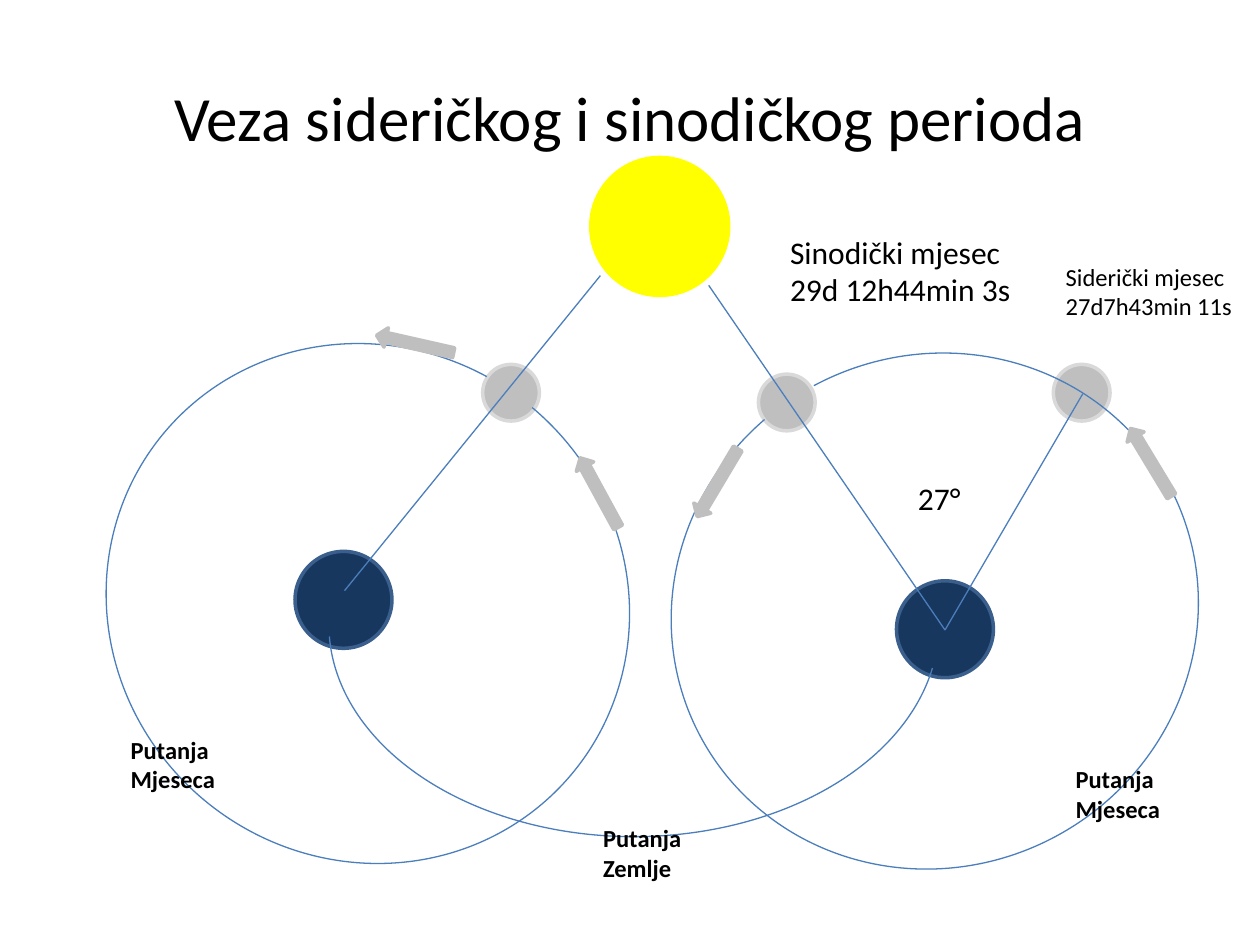
from lxml.etree import SubElement
from pptx import Presentation
from pptx.dml.color import RGBColor
from pptx.enum.shapes import MSO_CONNECTOR, MSO_SHAPE
from pptx.enum.text import MSO_ANCHOR, MSO_AUTO_SIZE, PP_ALIGN
from pptx.oxml.ns import qn
from pptx.util import Pt

COLORS = {
    "text": "000000",
    "earth": "17375E",
    "earth_edge": "3A5F8C",
    "sun": "FFFF00",
    "moon": "BFBFBF",
    "moon_edge": "D9D9D9",
    "orbit": "4B7EBC",
}


class Diagram:
    font_name = "Calibri"
    thin = 0.75
    thick = 2

    def __init__(self, slide):
        self.slide = slide

    def color(self, name):
        return RGBColor.from_string(COLORS[name])

    def format_paragraph(self, paragraph, size, bold=False):
        font = paragraph.font
        font.name = self.font_name
        font.size = Pt(size)
        font.bold = bold
        font.color.rgb = self.color("text")

    def title(self, text, left, top, width, height):
        title = self.slide.shapes.title
        title.left, title.top = Pt(left), Pt(top)
        title.width, title.height = Pt(width), Pt(height)
        title.text_frame.text = text
        title.text_frame.vertical_anchor = MSO_ANCHOR.MIDDLE
        paragraph = title.text_frame.paragraphs[0]
        paragraph.alignment = PP_ALIGN.CENTER
        self.format_paragraph(paragraph, 36)

    def shape(self, kind, center_x, center_y, width, height, fill, edge, weight):
        shape = self.slide.shapes.add_shape(
            kind, Pt(center_x - width / 2), Pt(center_y - height / 2), Pt(width), Pt(height))
        shape.shadow.inherit = False
        if fill:
            shape.fill.solid()
            shape.fill.fore_color.rgb = self.color(fill)
        else:
            shape.fill.background()
        shape.line.color.rgb = self.color(edge)
        shape.line.width = Pt(weight)
        return shape

    def disc(self, center_x, center_y, diameter, fill, edge):
        self.shape(MSO_SHAPE.OVAL, center_x, center_y, diameter, diameter,
                   fill, edge, self.thick)

    def orbit(self, center_x, center_y, width, height, rotation, start, end):
        arc = self.shape(MSO_SHAPE.ARC, center_x, center_y, width, height,
                         None, "orbit", self.thin)
        arc.rotation = rotation
        arc.adjustments[0] = start
        arc.adjustments[1] = end

    def arrow(self, center_x, center_y, rotation):
        arrow = self.shape(MSO_SHAPE.RIGHT_ARROW, center_x, center_y, 45.2, 11.3,
                           "moon", "moon", self.thick)
        arrow.rotation = rotation

    def line(self, start, end):
        points = [Pt(value) for value in (*start, *end)]
        connector = self.slide.shapes.add_connector(MSO_CONNECTOR.STRAIGHT, *points)
        connector.line.color.rgb = self.color("orbit")
        connector.line.width = Pt(self.thin)
        SubElement(connector._element.spPr, qn("a:effectLst"))

    def label(self, text, left, top, width, height, size, bold=False):
        box = self.slide.shapes.add_textbox(Pt(left), Pt(top), Pt(width), Pt(height))
        frame = box.text_frame
        frame.word_wrap = True
        frame.auto_size = MSO_AUTO_SIZE.SHAPE_TO_FIT_TEXT
        frame.text = text
        for paragraph in frame.paragraphs:
            self.format_paragraph(paragraph, size, bold)


def main():
    presentation = Presentation()
    presentation.slide_width, presentation.slide_height = Pt(720), Pt(540)
    slide = presentation.slides.add_slide(presentation.slide_layouts[5])
    diagram = Diagram(slide)
    diagram.title("Veza sideričkog i sinodičkog perioda", 36, 21.6, 648, 90)

    for center in ((196.3, 342.8), (540, 359.6)):
        diagram.disc(*center, 55.4, "earth", "earth_edge")
    diagram.disc(377, 129.4, 78.8, "sun", "sun")
    for center in ((292, 224.4), (618.1, 224.4), (449.6, 230)):
        diagram.disc(*center, 32.4, "moon", "moon_edge")

    diagram.orbit(210.2, 344.9, 303.8, 292.3, 40, 162, 154.6)
    diagram.orbit(534.2, 349.2, 303.8, 292.3, 331.8, 162, 153.94)
    diagram.orbit(362.2, 357.1, 348.5, 241.9, 180, 112.92, 214.7)

    earth_center = (540, 360)
    diagram.line((196.9, 337.5), (343.1, 157.5))
    diagram.line(earth_center, (405, 163.1))
    diagram.line(earth_center, (618.75, 225))

    diagram.label("Putanja Zemlje", 337.5, 466.9, 95.6, 41.2, 14, True)
    diagram.label("Putanja Mjeseca", 67.5, 416.2, 73.1, 41.2, 14, True)
    diagram.label("Putanja Mjeseca", 607.5, 433.1, 73.1, 41.2, 14, True)
    diagram.label("27°", 517.5, 270, 45, 29.1, 18)
    diagram.label("Siderički mjesec\n27d7h43min 11s", 601.9, 146.2, 118.1, 41.2, 14)
    diagram.label("Sinodički mjesec 29d 12h44min 3s", 444.4, 129.4, 140.6, 50.9, 18)

    for center_x, center_y, rotation in ((237.2, 196.6, 192.7), (657.7, 264.2, 238.8),
                                         (410, 275.8, 120.8), (342.4, 281.5, 241.4)):
        diagram.arrow(center_x, center_y, rotation)

    presentation.save("out.pptx")


if __name__ == "__main__":
    main()
